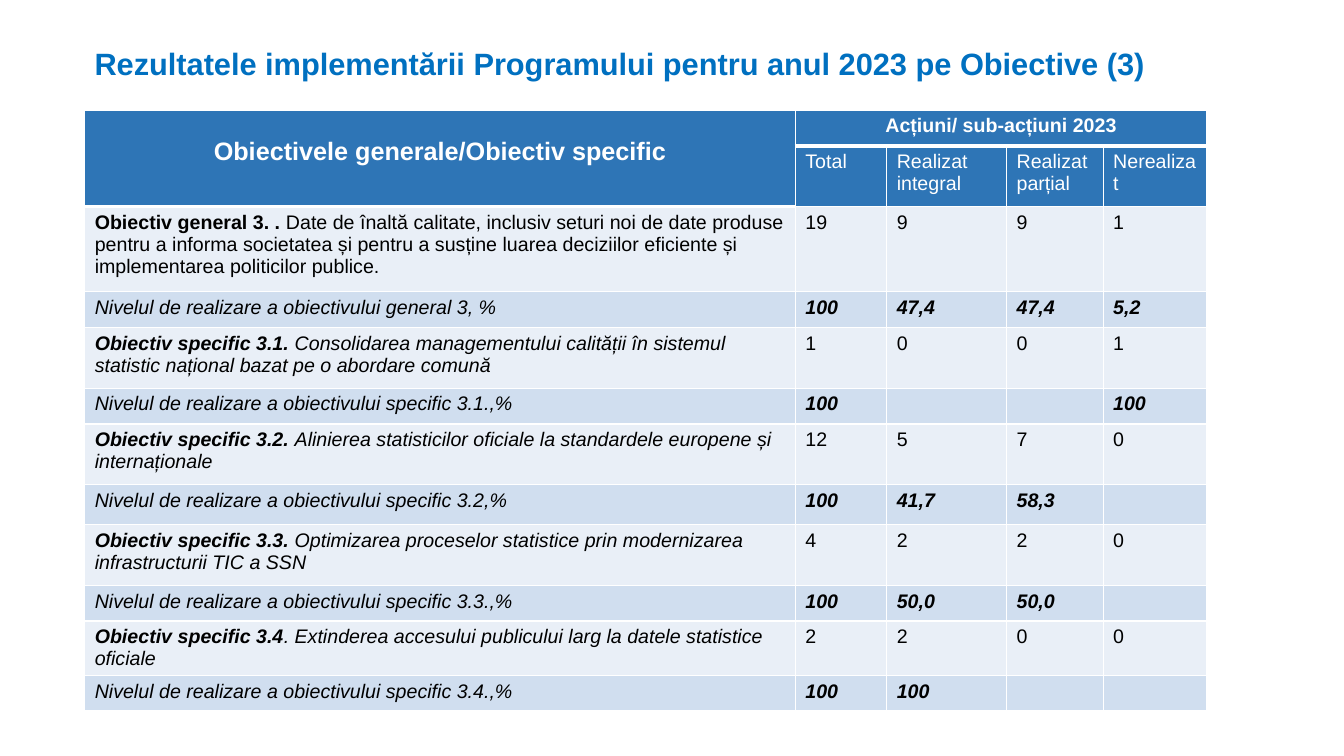
import dataclasses

import lxml.etree
import pptx
import pptx.dml.color
import pptx.enum.text
import pptx.oxml.ns
import pptx.util

Pt = pptx.util.Pt
CENTER = pptx.enum.text.PP_ALIGN.CENTER


@dataclasses.dataclass
class Theme:
    font: str = "Arial"
    title: str = "0070C0"
    header: str = "2E75B6"
    white: str = "FFFFFF"
    black: str = "000000"
    objective: str = "E9EFF7"
    level: str = "D0DEEF"
    title_size: float = 22
    heading_size: float = 18
    body_size: float = 14
    thin: float = 1
    thick: float = 3


class SlideBuilder:
    def __init__(self, slide, theme):
        self.slide = slide
        self.theme = theme

    def add_text(self, paragraph, text, color, size=None, bold=False, italic=False):
        run = paragraph.add_run()
        run.text = text
        values = {
            "name": self.theme.font,
            "size": Pt(size or self.theme.body_size),
            "bold": bold,
            "italic": italic,
        }
        for name, value in values.items():
            setattr(run.font, name, value)
        run.font.color.rgb = pptx.dml.color.RGBColor.from_string(color)

    def title(self, text, left, top, width, height):
        shape = self.slide.shapes.add_textbox(Pt(left), Pt(top), Pt(width), Pt(height))
        shape.text_frame.word_wrap = True
        shape.text_frame.auto_size = pptx.enum.text.MSO_AUTO_SIZE.SHAPE_TO_FIT_TEXT
        self.add_text(shape.text_frame.paragraphs[0], text, self.theme.title,
                      self.theme.title_size, bold=True)

    def table(self, left, top, widths, heights):
        frame = self.slide.shapes.add_table(
            len(heights), len(widths), Pt(left), Pt(top), Pt(sum(widths)), Pt(sum(heights)))
        table = frame.table
        for column, width in zip(table.columns, widths):
            column.width = Pt(width)
        for row, height in zip(table.rows, heights):
            row.height = Pt(height)
        return table

    def border(self, cell, side, width):
        properties = cell._tc.get_or_add_tcPr()
        qn = pptx.oxml.ns.qn
        line = lxml.etree.SubElement(properties, qn(f"a:ln{side}"), w=str(Pt(width)))
        fill = lxml.etree.SubElement(line, qn("a:solidFill"))
        lxml.etree.SubElement(fill, qn("a:srgbClr"), val=self.theme.white)

    def cell(self, table, row, column, fill, runs=(), alignment=None):
        cell = table.cell(row, column)
        for side, edge in (("L", None), ("R", None), ("T", row), ("B", row + 1)):
            is_thick = edge == 1 or (edge == 2 and column == 0)
            self.border(cell, side, self.theme.thick if is_thick else self.theme.thin)
        cell.fill.solid()
        cell.fill.fore_color.rgb = pptx.dml.color.RGBColor.from_string(fill)
        paragraph = cell.text_frame.paragraphs[0]
        paragraph.alignment = alignment
        for text, values in runs:
            self.add_text(paragraph, text, **values)
        if not runs:
            ending = lxml.etree.SubElement(paragraph._p, pptx.oxml.ns.qn("a:endParaRPr"))
            ending.set("sz", str(self.theme.body_size * 100))
        return cell

    def header(self, table, heading, group, labels):
        theme = self.theme
        bold = {"color": theme.white, "bold": True}
        cell = self.cell(table, 0, 0, theme.header,
                         [(heading, {**bold, "size": theme.heading_size})], CENTER)
        cell.margin_top = Pt(19.5)
        self.cell(table, 0, 1, theme.header, [(group, bold)], CENTER)
        for column in range(2, len(labels) + 1):
            self.cell(table, 0, column, theme.header)
        self.cell(table, 1, 0, theme.header)
        for column, label in enumerate(labels, 1):
            self.cell(table, 1, column, theme.header, [(label, {"color": theme.white})])
        table.cell(0, 0).merge(table.cell(1, 0))
        table.cell(0, 1).merge(table.cell(0, len(labels)))

    def row(self, table, row, fill, runs, numbers, style):
        self.cell(table, row, 0, fill, runs)
        for column, number in enumerate(numbers, 1):
            self.cell(table, row, column, fill, [(number, style)] if number else ())

    def objective(self, table, row, name, description, counts, level, shares, italic):
        plain = {"color": self.theme.black}
        strong = {**plain, "bold": True, "italic": italic}
        slanted = {**plain, "italic": True}
        self.row(table, row, self.theme.objective,
                 [(name, strong), (description, {**plain, "italic": italic})], counts, plain)
        self.row(table, row + 1, self.theme.level,
                 [(f"Nivelul de realizare a obiectivului {level}", slanted)],
                 shares, {**slanted, "bold": True})


OBJECTIVES = [
    ("Obiectiv general 3. .",
     " Date de înaltă calitate, inclusiv seturi noi de date produse pentru a informa "
     "societatea și pentru a susține luarea deciziilor eficiente și implementarea "
     "politicilor publice.",
     ("19", "9", "9", "1"), "general 3, %", ("100", "47,4", "47,4", "5,2")),
    ("Obiectiv specific 3.1. ",
     "Consolidarea managementului calității în sistemul statistic național bazat pe o "
     "abordare comună",
     ("1", "0", "0", "1"), "specific 3.1.,%", ("100", "", "", "100")),
    ("Obiectiv specific 3.2. ",
     "Alinierea statisticilor oficiale la standardele europene și internaționale",
     ("12", "5", "7", "0"), "specific 3.2,%", ("100", "41,7", "58,3", "")),
    ("Obiectiv specific 3.3. ",
     "Optimizarea proceselor statistice prin modernizarea infrastructurii TIC a SSN",
     ("4", "2", "2", "0"), "specific 3.3.,%", ("100", "50,0", "50,0", "")),
    ("Obiectiv specific 3.4",
     ". Extinderea accesului publicului larg la datele statistice oficiale",
     ("2", "2", "0", "0"), "specific 3.4.,%", ("100", "100", "", "")),
]


def main():
    presentation = pptx.Presentation()
    presentation.slide_width = Pt(960)
    presentation.slide_height = Pt(540)
    slide = presentation.slides.add_slide(presentation.slide_layouts[6])
    builder = SlideBuilder(slide, Theme())

    single, double = 25.6, 43.2
    table = builder.table(
        60.5, 78.6, [507.6, 65.3, 85.6, 69, 74.2],
        [single, double, 61, single, double, single, double, 28.8, double, single, 38.6, single])
    builder.header(table, "Obiectivele generale/Obiectiv specific", "Acțiuni/ sub-acțiuni 2023",
                   ["Total", "Realizat integral", "Realizat parțial", "Nerealizat"])
    for index, objective in enumerate(OBJECTIVES):
        builder.objective(table, 2 + 2 * index, *objective, italic=index > 0)
    builder.title("Rezultatele implementării Programului pentru anul 2023 pe Obiective (3)",
                  60.5, 28.1, 772, 33.8)
    presentation.save("out.pptx")


if __name__ == "__main__":
    main()
